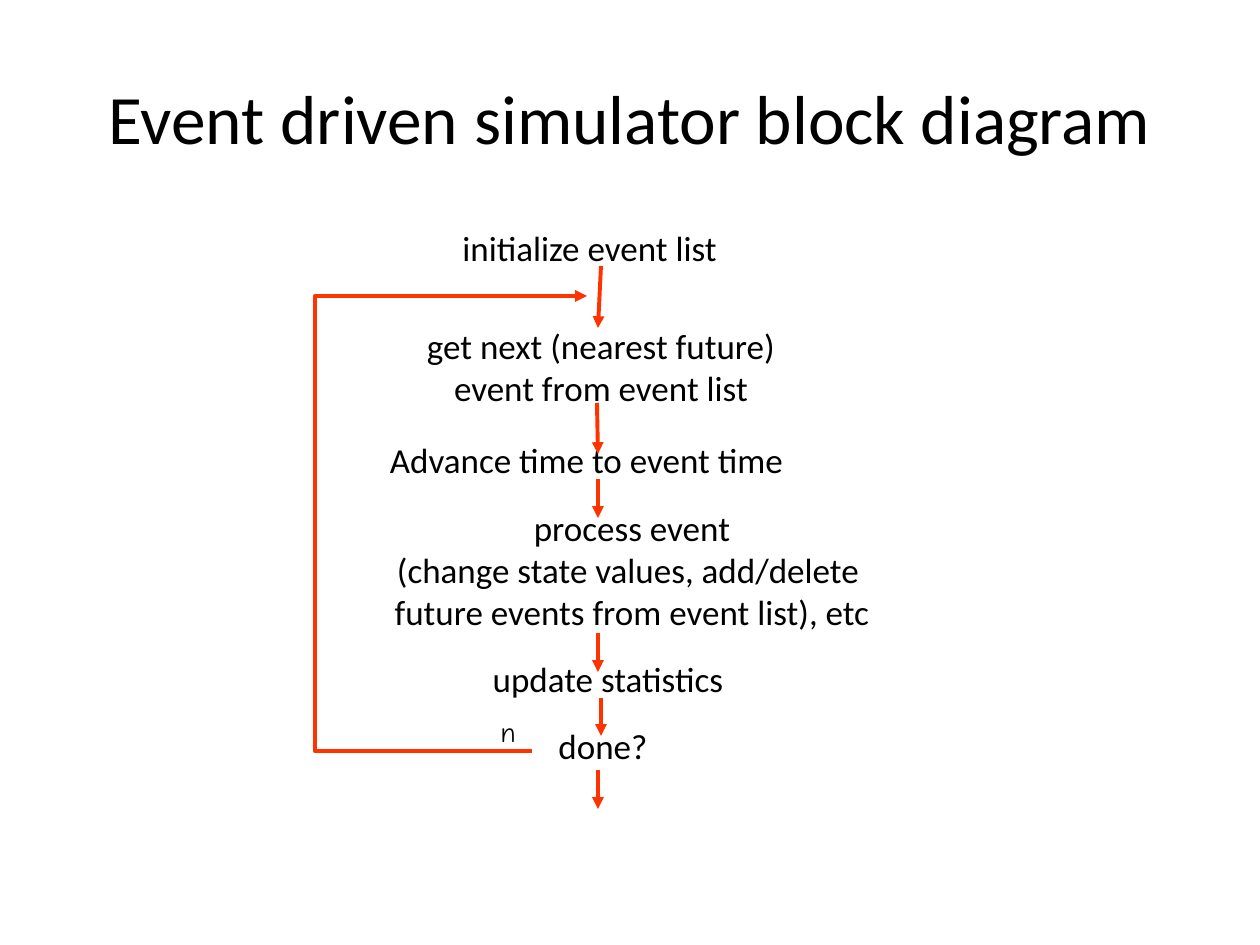
import pptx
import pptx.dml.color
import pptx.enum.shapes
import pptx.enum.text
import pptx.oxml.ns
import pptx.util
import lxml.etree

EMU_PER_PX = 914400 // 126
COLORS = {"paper": "FFFFFF", "ink": "000000", "arrow": "FF3300"}
ALIGN = pptx.enum.text.PP_ALIGN
ANCHOR = pptx.enum.text.MSO_ANCHOR

# Left, top, width, height and lines, relative to the flow box
STEPS = [
    (87, 98, 398, 97, ["get next (nearest future)", "event from event list"]),
    (60, 212, 423, 55, ["Advance time to event time"]),
    (67, 280, 500, 140, ["process event", "(change state values, add/delete ",
                         "future events from event list), etc"]),
    (155, 431, 276, 54, ["update statistics"]),
    (227, 498, 122, 54, ["done?"]),
]
# Start x, start y, end x, end y, relative to the flow box
ARROWS = [
    (286, 46, 283, 108),
    (282, 183, 283, 234),
    (283, 259, 283, 298),
    (283, 413, 283, 452),
    (286, 478, 286, 516),
    (283, 550, 283, 589),
]
LOOP = [(217, 531), (0, 531), (0, 76), (272, 76)]


def px(length):
    return pptx.util.Emu(length * EMU_PER_PX)


def color(name):
    return pptx.dml.color.RGBColor.from_string(COLORS[name])


def add_text(page, box, lines, size, font="Calibri", align=ALIGN.CENTER,
             anchor=ANCHOR.TOP, wrap=False):
    frame = page.shapes.add_textbox(*map(px, box)).text_frame
    frame.word_wrap = wrap
    frame.vertical_anchor = anchor
    for index, line in enumerate(lines):
        para = frame.add_paragraph() if index else frame.paragraphs[0]
        para.alignment = align
        span = para.add_run()
        span.text = line
        span.font.size = pptx.util.Pt(size)
        span.font.name = font
        span.font.color.rgb = color("ink")


def style_arrow(shape):
    shape.line.color.rgb = color("arrow")
    shape.line.width = pptx.util.Pt(2.25)
    qn = pptx.oxml.ns.qn
    outline = shape.line._get_or_add_ln()
    lxml.etree.SubElement(outline, qn("a:tailEnd"), type="triangle")


def add_arrow(page, start, end):
    arrow = page.shapes.add_connector(
        pptx.enum.shapes.MSO_CONNECTOR.STRAIGHT, *map(px, start + end))
    style_arrow(arrow)
    lxml.etree.SubElement(arrow._element.spPr, pptx.oxml.ns.qn("a:effectLst"))


def add_loop(page, points):
    builder = page.shapes.build_freeform(*points[0], scale=EMU_PER_PX)
    builder.add_line_segments(points[1:], close=False)
    loop = builder.convert_to_shape()
    loop.fill.background()
    loop.shadow.inherit = False
    style_arrow(loop)


def add_title(page, box):
    add_text(page, box, ["Event driven simulator block diagram"], 39.6,
             anchor=ANCHOR.MIDDLE, wrap=True)


def add_flow(page, box):
    left, top = box[:2]

    # Steps
    add_text(page, (left + 135, top, 297, 54), ["initialize event list"], 20,
             align=ALIGN.LEFT)
    for x, y, width, height, lines in STEPS:
        add_text(page, (left + x, top + y, width, height), lines, 20)

    # Arrows between steps
    for x1, y1, x2, y2 in ARROWS:
        add_arrow(page, (left + x1, top + y1), (left + x2, top + y2))

    # Return loop and its label
    add_loop(page, [(left + x, top + y) for x, y in LOOP])
    add_text(page, (left + 173, top + 488, 40, 47), ["n"], 16,
             font="Comic Neue", align=ALIGN.LEFT)


def main():
    deck = pptx.Presentation()
    deck.slide_width, deck.slide_height = px(1260), px(945)
    page = deck.slides.add_slide(deck.slide_layouts[6])
    page.background.fill.solid()
    page.background.fill.fore_color.rgb = color("paper")
    add_title(page, (63, 38, 1134, 157))
    add_flow(page, (315, 220, 567, 589))
    deck.save("out.pptx")


if __name__ == "__main__":
    main()
